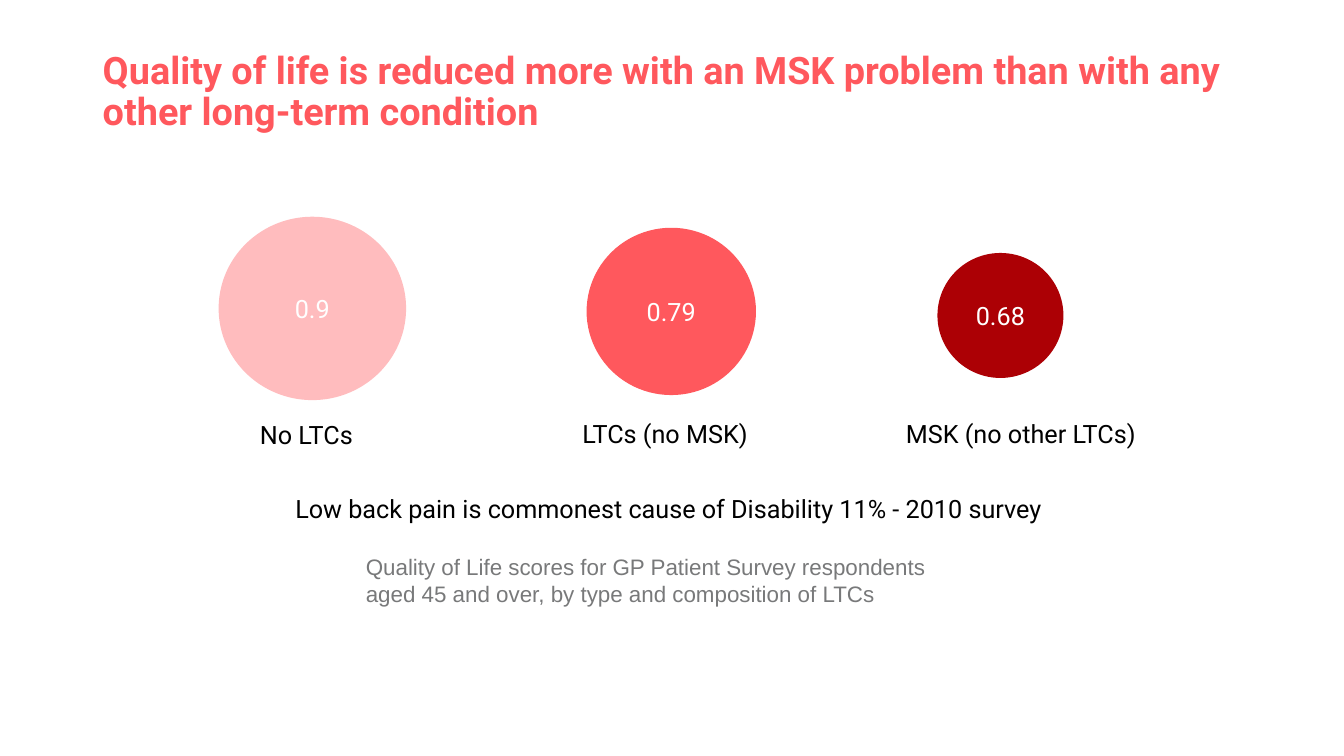
from dataclasses import dataclass

from pptx import Presentation
from pptx.dml.color import RGBColor
from pptx.enum.shapes import MSO_SHAPE
from pptx.enum.text import MSO_ANCHOR, MSO_AUTO_SIZE, PP_ALIGN
from pptx.slide import Slide
from pptx.text.text import TextFrame
from pptx.util import Pt

ELLIPSE = MSO_SHAPE.OVAL
TOP, MIDDLE = MSO_ANCHOR.TOP, MSO_ANCHOR.MIDDLE
LEFT, CENTER = PP_ALIGN.LEFT, PP_ALIGN.CENTER
NO_FIT = MSO_AUTO_SIZE.NONE

CORAL = RGBColor(0xFF, 0x58, 0x5D)
PINK = RGBColor(0xFF, 0xBC, 0xBE)
DARK_RED = RGBColor(0xAC, 0x00, 0x05)
GREY = RGBColor(0x78, 0x79, 0x7A)
BLACK = RGBColor(0x00, 0x00, 0x00)
WHITE = RGBColor(0xFF, 0xFF, 0xFF)


@dataclass
class Box:
    left: float
    top: float
    width: float
    height: float


@dataclass
class Score:
    value: str
    circle: Box
    color: RGBColor


@dataclass
class Label:
    text: str
    box: Box
    font: str = "Roboto"
    size: float = 18
    color: RGBColor = BLACK


SCORES = [
    Score("0.9", Box(156.2, 154.8, 133.9, 131), PINK),
    Score("0.79", Box(419, 162.7, 121, 119.5), CORAL),
    Score("0.68", Box(669.6, 180.7, 90, 89.3), DARK_RED),
]

LABELS = [
    Label("No LTCs", Box(178.6, 295.9, 89.3, 29)),
    Label("LTCs (no MSK)", Box(409, 295.2, 141, 29)),
    Label("MSK (no other LTCs)", Box(640, 295.2, 185, 29)),
    Label("Low back pain is commonest cause of Disability 11% - 2010 survey",
          Box(203.8, 348.5, 689.8, 29)),
    Label("Quality of Life scores for GP Patient Survey respondents "
          "aged 45 and over, by type and composition of LTCs",
          Box(254.2, 391.7, 452.2, 67.7), "Arial", 16, GREY),
]


def place(box: Box) -> tuple[Pt, Pt, Pt, Pt]:
    return Pt(box.left), Pt(box.top), Pt(box.width), Pt(box.height)


def write(tf: TextFrame, text: str, font: str, size: float, color: RGBColor,
          align: PP_ALIGN = LEFT, bold: bool = False) -> None:
    tf.word_wrap = True
    p = tf.paragraphs[0]
    p.alignment = align
    r = p.add_run()
    r.text = text
    r.font.name = font
    r.font.size = Pt(size)
    r.font.bold = bold
    r.font.color.rgb = color


def add_title(s: Slide, text: str, box: Box) -> None:
    sp = s.shapes.title
    sp.left, sp.top, sp.width, sp.height = place(box)
    tf = sp.text_frame
    tf.auto_size = NO_FIT
    tf.vertical_anchor = TOP
    tf.margin_top = Pt(8.5)
    write(tf, text, "Roboto", 27, CORAL, bold=True)
    tf.paragraphs[0].line_spacing = 0.9


def add_score(s: Slide, score: Score) -> None:
    sp = s.shapes.add_shape(ELLIPSE, *place(score.circle))
    sp.shadow.inherit = False
    sp.fill.solid()
    sp.fill.fore_color.rgb = score.color
    sp.line.fill.background()
    sp.text_frame.vertical_anchor = MIDDLE
    write(sp.text_frame, score.value, "Roboto", 18, WHITE, CENTER)


def add_label(s: Slide, label: Label) -> None:
    tf = s.shapes.add_textbox(*place(label.box)).text_frame
    write(tf, label.text, label.font, label.size, label.color)


def main() -> None:
    prs = Presentation()
    prs.slide_width, prs.slide_height = Pt(960), Pt(540)
    s = prs.slides.add_slide(prs.slide_layouts[5])
    add_title(s, "Quality of life is reduced more with an MSK problem "
              "than with any other long-term condition",
              Box(66.2, 28.8, 828, 104.4))
    for score in SCORES:
        add_score(s, score)
    for label in LABELS:
        add_label(s, label)
    prs.save("out.pptx")


if __name__ == "__main__":
    main()
